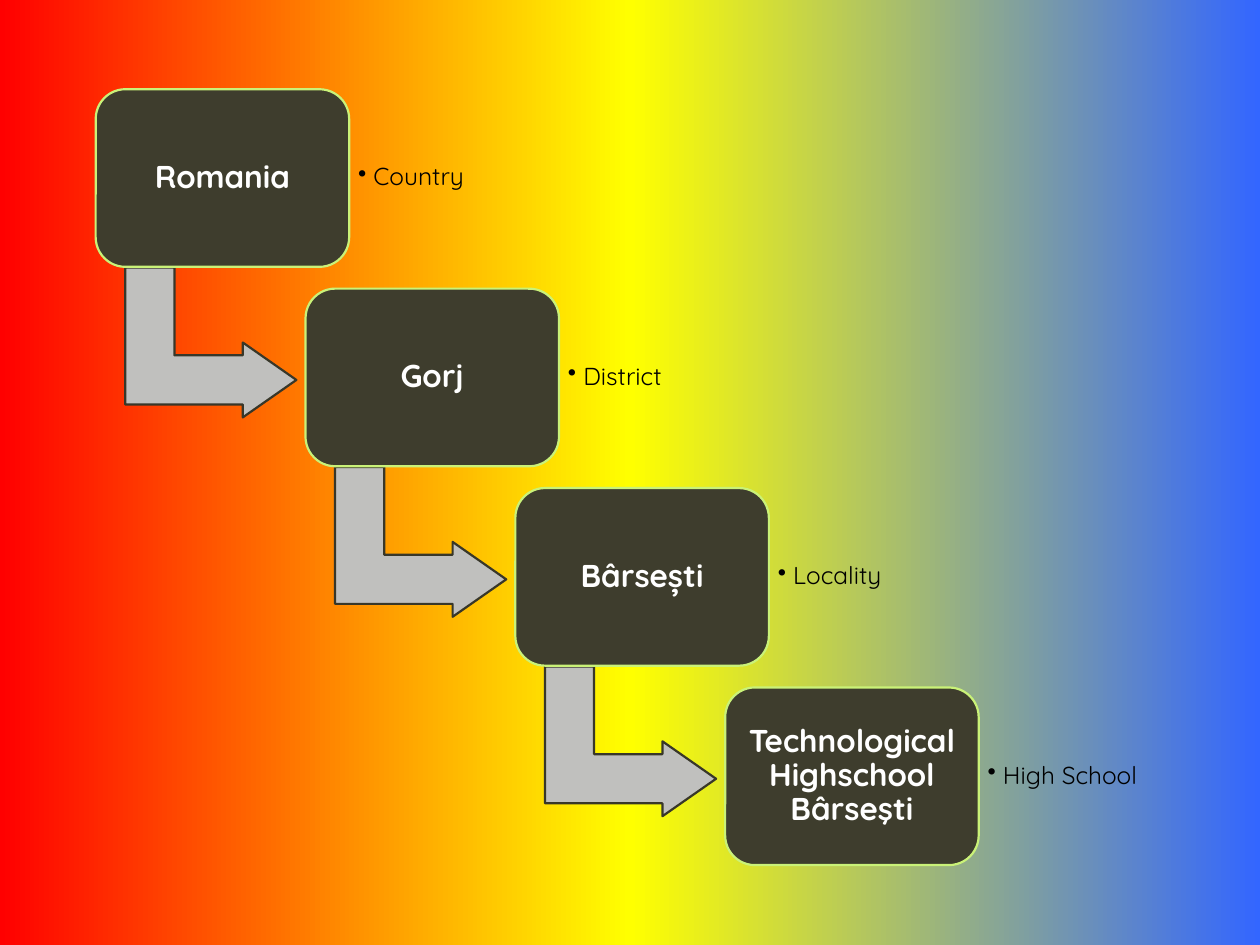
from copy import deepcopy

from lxml import etree
from pptx import Presentation
from pptx.dml.color import RGBColor
from pptx.enum.shapes import MSO_SHAPE
from pptx.enum.text import MSO_ANCHOR, PP_ALIGN
from pptx.oxml.ns import qn
from pptx.util import Cm, Pt

ROUNDED, BENT_ARROW = MSO_SHAPE.ROUNDED_RECTANGLE, MSO_SHAPE.BENT_UP_ARROW
MIDDLE = MSO_ANCHOR.MIDDLE
LEFT, CENTER = PP_ALIGN.LEFT, PP_ALIGN.CENTER

COLORS = {
    "red": "FF0000", "yellow": "FFFF00", "blue": "3366FF",
    "box": "3E3D2D", "box_line": "CAF278",
    "arrow": "C0C0BE", "arrow_line": "383729",
    "white": "FFFFFF", "black": "000000",
}
STEPS = [
    ("Romania", "Country"),
    ("Gorj", "District"),
    ("Bârsești", "Locality"),
    ("Technological Highschool Bârseşti", "High School"),
]
LEFT_EDGE, TOP_EDGE = 1.93, 1.8
STEP_X, STEP_Y = 4.23, 4.02
BOX_W, BOX_H = 5.11, 3.58


def rgb(name):
    return RGBColor.from_string(COLORS[name])


class StepSlide:
    font = "Quicksand"
    line_width = Pt(1.25)

    def __init__(self, prs):
        self.s = prs.slides.add_slide(prs.slide_layouts[6])

    def background(self, names):
        """Spread the named colours evenly from left to right."""
        fill = self.s.background.fill
        fill.gradient()
        fill.gradient_angle = 0
        first = fill.gradient_stops[0]._gs
        for _ in names[2:]:
            first.addnext(deepcopy(first))
        for i, (stop, name) in enumerate(zip(fill.gradient_stops, names)):
            stop.color.rgb = rgb(name)
            stop.position = i / (len(names) - 1)

    def shape(self, kind, x, y, w, h, color, adjustments):
        sp = self.s.shapes.add_shape(kind, Cm(x), Cm(y), Cm(w), Cm(h))
        sp.shadow.inherit = False
        sp.fill.solid()
        sp.fill.fore_color.rgb = rgb(color)
        sp.line.color.rgb = rgb(color + "_line")
        sp.line.width = self.line_width
        for i, value in enumerate(adjustments):
            sp.adjustments[i] = value
        return sp

    def text(self, sp, text, color, inset, align, bullet=False, **font):
        tf = sp.text_frame
        frame = {"word_wrap": True, "vertical_anchor": MIDDLE}
        for side in ("left", "right", "top", "bottom"):
            frame[f"margin_{side}"] = Cm(inset)
        for key, value in frame.items():
            setattr(tf, key, value)
        p = tf.paragraphs[0]
        if bullet:
            pPr = p._p.get_or_add_pPr()
            pPr.set("marL", str(Cm(0.31)))
            pPr.set("indent", str(-Cm(0.31)))
            etree.SubElement(pPr, qn("a:buChar"), char="•")
        p.alignment = align
        p.line_spacing = 0.9
        r = p.add_run()
        r.text = text
        r.font.color.rgb = rgb(color)
        for key, value in {"name": self.font, **font}.items():
            setattr(r.font, key, value)

    def arrow(self, x, y):
        sp = self.shape(BENT_ARROW, x, y, 3.02, 3.45, "arrow",
                        (0.328, 0.25, 0.358))
        sp.rotation = 90

    def box(self, x, y, text):
        sp = self.shape(ROUNDED, x, y, BOX_W, BOX_H, "box", (0.167,))
        self.text(sp, text, "white", 0.1, CENTER, size=Pt(18), bold=True)

    def label(self, x, y, text):
        sp = self.s.shapes.add_textbox(Cm(x), Cm(y), Cm(3.71), Cm(2.9))
        self.text(sp, text, "black", 0.18, LEFT, bullet=True, size=Pt(14))


def main():
    prs = Presentation()
    prs.slide_width, prs.slide_height = Cm(25.4), Cm(19.05)
    slide = StepSlide(prs)
    slide.background(["red", "yellow", "blue"])
    for i, (place, kind) in enumerate(STEPS):
        x, y = LEFT_EDGE + i * STEP_X, TOP_EDGE + i * STEP_Y
        if i < len(STEPS) - 1:
            slide.arrow(x + 0.81, y + 3.38)
        slide.box(x, y, place)
        slide.label(x + BOX_W, y + 0.34, kind)
    prs.save("out.pptx")


if __name__ == "__main__":
    main()
